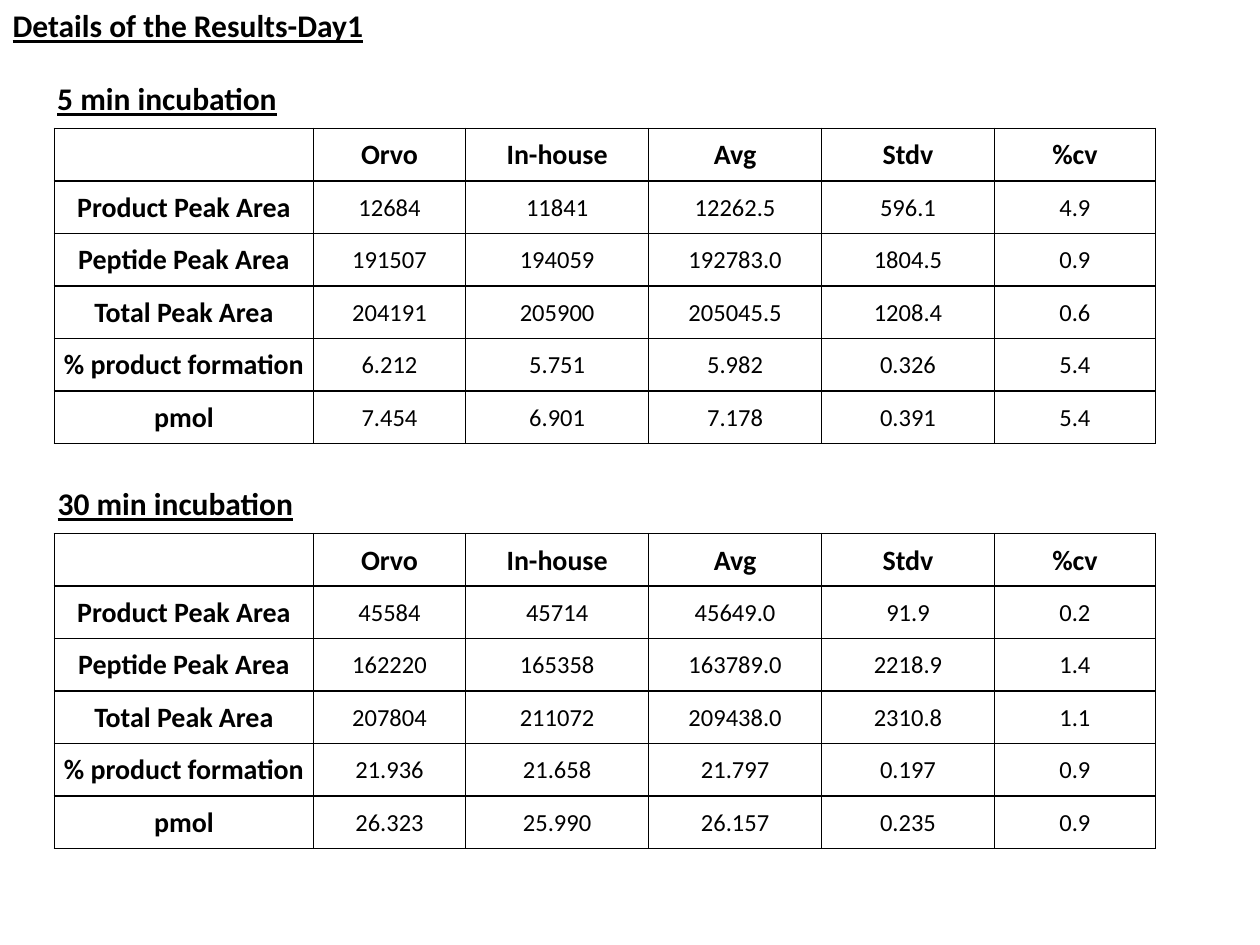
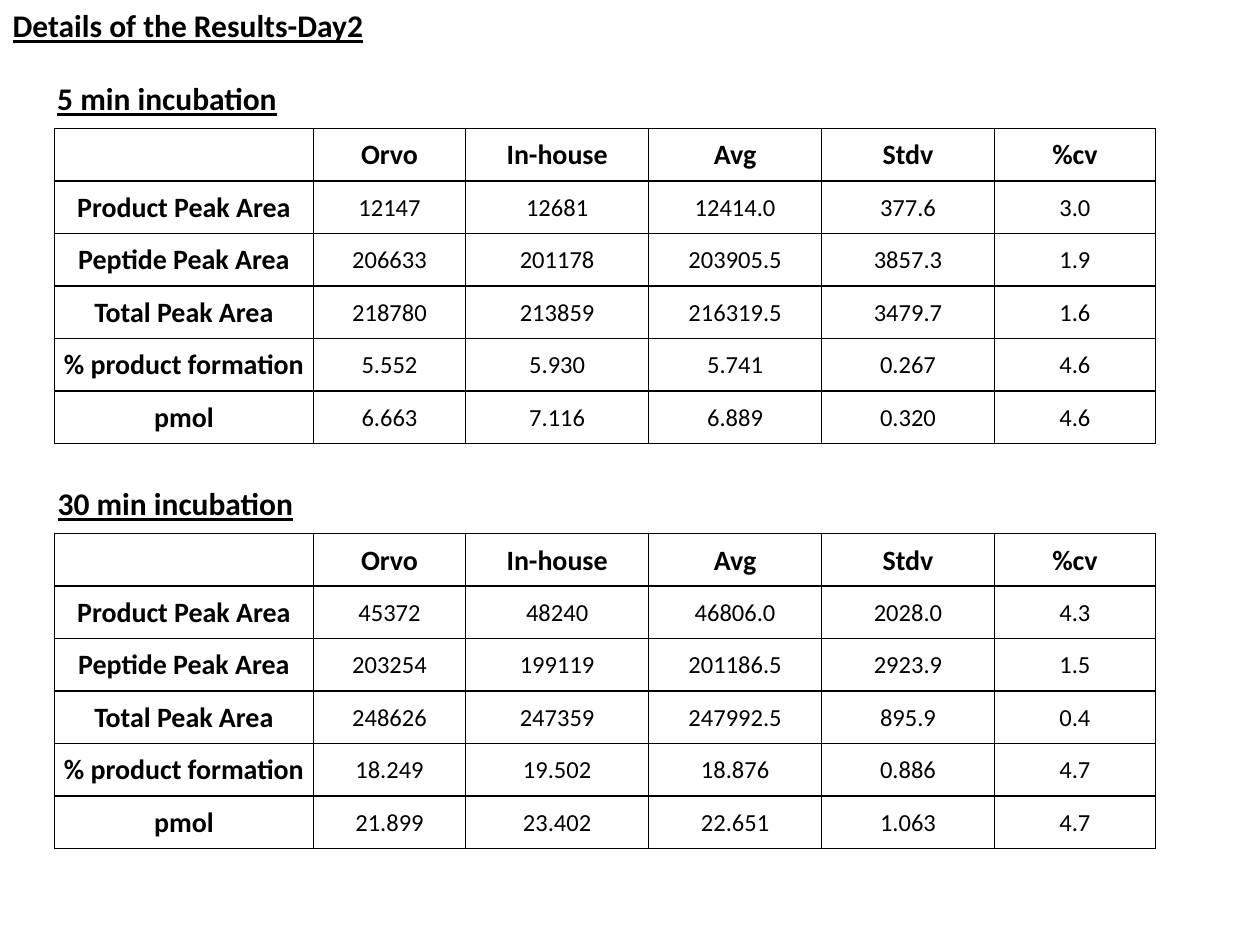
from dataclasses import dataclass

from lxml import etree
from pptx import Presentation, util as u
from pptx.dml.color import RGBColor
from pptx.enum import text
from pptx.oxml import ns


@dataclass(frozen=True)
class Theme:
    font: str = "Calibri"
    ink: str = "000000"
    heading_size: int = 18
    label_size: int = 16
    value_size: int = 14
    border_width: int = 1


theme = Theme()


def write(frame, content, size=theme.heading_size, bold=True, underline=False,
          align=text.PP_ALIGN.CENTER):
    paragraph = frame.paragraphs[0]
    paragraph.alignment = align
    run = paragraph.add_run()
    run.text = content
    run.font.name = theme.font
    run.font.size = u.Pt(size)
    run.font.bold = bold
    run.font.underline = underline
    run.font.color.rgb = RGBColor.from_string(theme.ink)


def add_borders(cell):
    properties = cell._tc.get_or_add_tcPr()
    for side in ("a:lnL", "a:lnR", "a:lnT", "a:lnB"):
        line = etree.SubElement(properties, ns.qn(side), w=str(u.Pt(theme.border_width)))
        fill = etree.SubElement(line, ns.qn("a:solidFill"))
        etree.SubElement(fill, ns.qn("a:srgbClr"), val=theme.ink)


columns = ["", "Orvo", "In-house", "Avg", "Stdv", "%cv"]
column_widths = [148, 87, 104.6, 98.8, 98.8, 92]
measures = ["Product Peak Area", "Peptide Peak Area", "Total Peak Area",
            "% product formation", "pmol"]
row_height = 30
table_left, first_table_top, table_step = 31.1, 73.4, 231.5
heading_left, heading_rise, heading_height = 25, 31.6, 29
incubations = [("5 min incubation", 141), ("30 min incubation", 150.5)]

results = {
    "Details of the Results-Day1": [
        [["12684", "11841", "12262.5", "596.1", "4.9"],
         ["191507", "194059", "192783.0", "1804.5", "0.9"],
         ["204191", "205900", "205045.5", "1208.4", "0.6"],
         ["6.212", "5.751", "5.982", "0.326", "5.4"],
         ["7.454", "6.901", "7.178", "0.391", "5.4"]],
        [["45584", "45714", "45649.0", "91.9", "0.2"],
         ["162220", "165358", "163789.0", "2218.9", "1.4"],
         ["207804", "211072", "209438.0", "2310.8", "1.1"],
         ["21.936", "21.658", "21.797", "0.197", "0.9"],
         ["26.323", "25.990", "26.157", "0.235", "0.9"]],
    ],
    "Details of the Results-Day2": [
        [["12147", "12681", "12414.0", "377.6", "3.0"],
         ["206633", "201178", "203905.5", "3857.3", "1.9"],
         ["218780", "213859", "216319.5", "3479.7", "1.6"],
         ["5.552", "5.930", "5.741", "0.267", "4.6"],
         ["6.663", "7.116", "6.889", "0.320", "4.6"]],
        [["45372", "48240", "46806.0", "2028.0", "4.3"],
         ["203254", "199119", "201186.5", "2923.9", "1.5"],
         ["248626", "247359", "247992.5", "895.9", "0.4"],
         ["18.249", "19.502", "18.876", "0.886", "4.7"],
         ["21.899", "23.402", "22.651", "1.063", "4.7"]],
    ],
}

presentation = Presentation()
presentation.slide_width, presentation.slide_height = u.Pt(720), u.Pt(540)
title_only = presentation.slide_layouts.get_by_name("Title Only")

for title_text, tables in results.items():
    slide = presentation.slides.add_slide(title_only)
    title = slide.shapes.title
    title.left, title.top = u.Pt(0), u.Pt(0)
    title.width, title.height = u.Pt(216.7), u.Pt(heading_height)
    title.text_frame.word_wrap = False
    title.text_frame.auto_size = text.MSO_AUTO_SIZE.NONE
    title.text_frame.vertical_anchor = text.MSO_ANCHOR.TOP
    write(title.text_frame, title_text, underline=True, align=text.PP_ALIGN.LEFT)

    for position, ((incubation, heading_width), values) in enumerate(zip(incubations, tables)):
        table_top = first_table_top + position * table_step
        heading = slide.shapes.add_textbox(
            u.Pt(heading_left), u.Pt(table_top - heading_rise),
            u.Pt(heading_width), u.Pt(heading_height))
        heading.text_frame.word_wrap = False
        write(heading.text_frame, incubation, underline=True)

        rows = [columns] + [[measure, *row] for measure, row in zip(measures, values)]
        table = slide.shapes.add_table(
            len(rows), len(columns), u.Pt(table_left), u.Pt(table_top),
            u.Pt(sum(column_widths)), u.Pt(row_height * len(rows))).table
        table.first_row = table.horz_banding = False
        for column, width in zip(table.columns, column_widths):
            column.width = u.Pt(width)

        for row_index, row in enumerate(rows):
            table.rows[row_index].height = u.Pt(row_height)
            for column_index, content in enumerate(row):
                cell = table.cell(row_index, column_index)
                add_borders(cell)
                cell.fill.background()
                cell.vertical_anchor = text.MSO_ANCHOR.MIDDLE
                cell.margin_left = cell.margin_right = cell.margin_top = u.Pt(0.72)
                cell.margin_bottom = u.Pt(0)
                is_label = row_index == 0 or column_index == 0
                if content:
                    write(cell.text_frame, content, bold=is_label,
                          size=theme.label_size if is_label else theme.value_size)

presentation.save("out.pptx")
